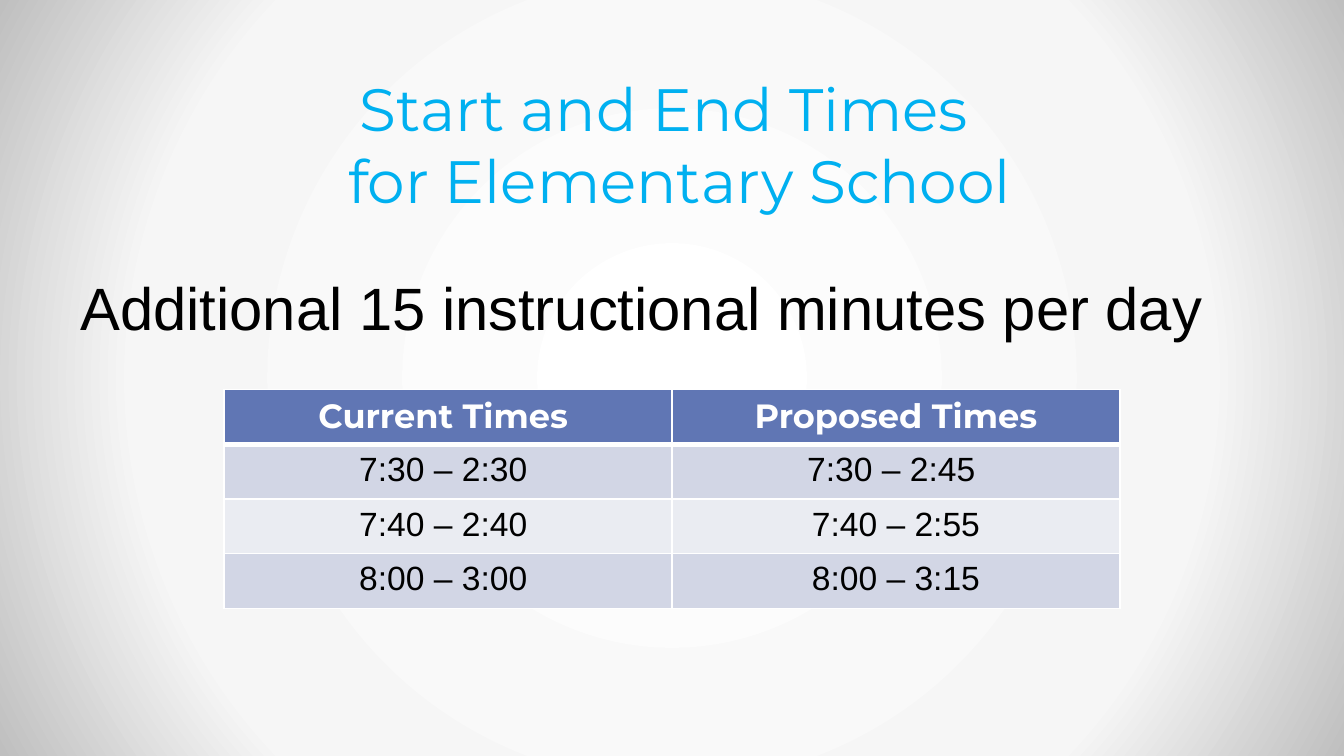
from dataclasses import dataclass

from lxml import etree
from pptx import Presentation
from pptx import util as u
from pptx.dml.color import RGBColor
from pptx.enum import text
from pptx.oxml import ns

COLORS = {
    "title": "00B0F0",
    "body": "000000",
    "white": "FFFFFF",
    "header": "6076B4",
    "odd": "D2D6E5",
    "even": "EAECF2",
}
GRADIENT = {0: "FFFFFF", 70: "F6F6F6", 100: "BFBFBF"}
WIDTH = u.Inches(10)
HEIGHT = int(WIDTH * 9 / 16)


@dataclass(frozen=True)
class Area:
    x: float
    y: float
    w: float
    h: float

    def box(self) -> tuple[int, int, int, int]:
        return (int(self.x * WIDTH), int(self.y * HEIGHT),
                int(self.w * WIDTH), int(self.h * HEIGHT))


@dataclass(frozen=True)
class Row:
    current: str
    proposed: str


TITLE = Area(0.05, 0.04, 0.9, 0.3)
BODY = Area(0.05, 0.35, 0.9, 0.54)
TIMES = Area(1 / 6, 0.515, 2 / 3, 0.29)
ROWS = [
    Row("Current Times ", "Proposed Times"),
    Row("7:30 – 2:30 ", "7:30 – 2:45 "),
    Row("7:40 – 2:40 ", "7:40 – 2:55"),
    Row("8:00 – 3:00 ", "8:00 – 3:15"),
]


def write(tf, content: str, *, size: float, font: str, color: str,
          bold: bool = False, align=text.PP_ALIGN.CENTER,
          before: float = 0) -> None:
    p = tf.paragraphs[0]
    p.alignment = align
    p.space_before = u.Pt(before)
    for i, line in enumerate(content.split("\n")):
        if i:
            p.add_line_break()
        r = p.add_run()
        r.text = line
        r.font.size = u.Pt(size)
        r.font.name = font
        r.font.bold = bold
        r.font.color.rgb = RGBColor.from_string(COLORS[color])


def add_text(s, area: Area, content: str, *, anchor, **style) -> None:
    tf = s.shapes.add_textbox(*area.box()).text_frame
    tf.word_wrap = True
    tf.vertical_anchor = anchor
    write(tf, content, **style)


def set_background(s) -> None:
    fill = s.background.fill
    fill.gradient()
    grad = s.background._cSld.find(".//" + ns.qn("a:gradFill"))
    for child in list(grad):
        grad.remove(child)
    stops = etree.SubElement(grad, ns.qn("a:gsLst"))
    for share, color in GRADIENT.items():
        stop = etree.SubElement(stops, ns.qn("a:gs"), pos=str(share * 1000))
        etree.SubElement(stop, ns.qn("a:srgbClr"), val=color)
    circle = etree.SubElement(grad, ns.qn("a:path"), {"path": "circle"})
    etree.SubElement(circle, ns.qn("a:fillToRect"),
                     dict.fromkeys("ltrb", "50000"))


def set_borders(cell, widths: dict[str, float]) -> None:
    tc_pr = cell._tc.get_or_add_tcPr()
    for i, (side, width) in enumerate(widths.items()):
        ln = etree.Element(ns.qn(f"a:ln{side}"), w=str(u.Pt(width)))
        fill = etree.SubElement(ln, ns.qn("a:solidFill"))
        etree.SubElement(fill, ns.qn("a:srgbClr"), val=COLORS["white"])
        tc_pr.insert(i, ln)


def add_times(s, area: Area, rows: list[Row]) -> None:
    table = s.shapes.add_table(len(rows), 2, *area.box()).table
    for i, row in enumerate(rows):
        header = i == 0
        fill = "header" if header else "odd" if i % 2 else "even"
        for j, content in enumerate((row.current, row.proposed)):
            cell = table.cell(i, j)
            cell.fill.solid()
            cell.fill.fore_color.rgb = RGBColor.from_string(COLORS[fill])
            set_borders(cell, {"L": 1, "R": 1, "T": 3 if i == 1 else 1,
                               "B": 3 if header else 1})
            write(cell.text_frame, content, size=18, bold=header,
                  font="Montserrat" if header else "Arial",
                  color="white" if header else "body")


def main() -> None:
    prs = Presentation()
    prs.slide_width, prs.slide_height = WIDTH, HEIGHT
    s = prs.slides.add_slide(prs.slide_layouts[6])
    set_background(s)
    add_text(s, TITLE, "Start and End Times \n for Elementary School",
             anchor=text.MSO_ANCHOR.MIDDLE, size=32, font="Montserrat",
             color="title")
    add_text(s, BODY, "Additional 15 instructional minutes per day",
             anchor=text.MSO_ANCHOR.TOP, size=32, font="Arial",
             color="body", align=text.PP_ALIGN.LEFT, before=6.4)
    add_times(s, TIMES, ROWS)
    prs.save("out.pptx")


if __name__ == "__main__":
    main()
